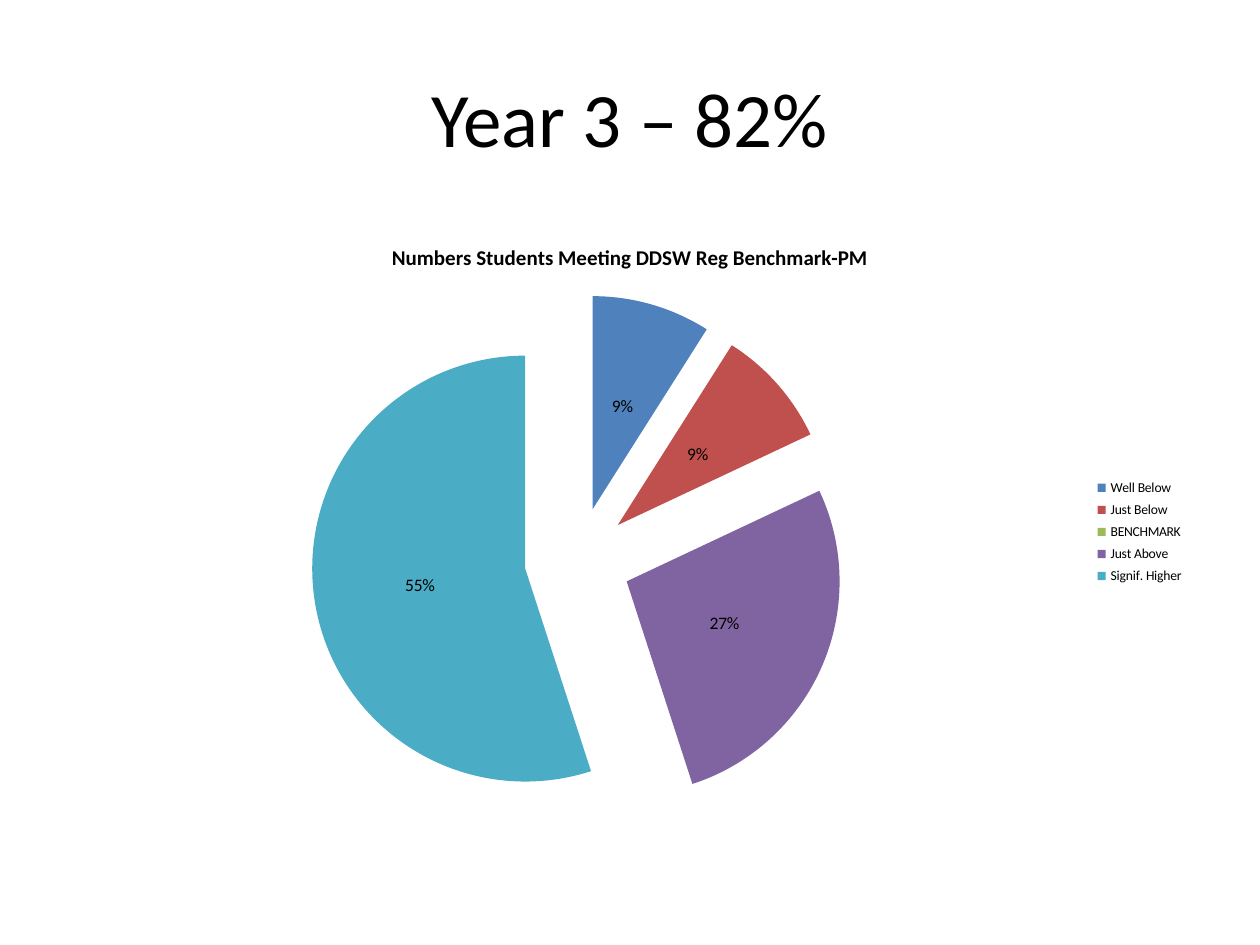
import pptx
import pptx.chart.data
import pptx.dml.color
import pptx.enum.chart
import pptx.enum.text
import pptx.oxml
import pptx.util

RGBColor = pptx.dml.color.RGBColor
BLACK = RGBColor(0x00, 0x00, 0x00)
BLUE = RGBColor(0x4F, 0x81, 0xBD)
RED = RGBColor(0xC0, 0x50, 0x4D)
GREEN = RGBColor(0x9B, 0xBB, 0x59)
PURPLE = RGBColor(0x80, 0x64, 0xA2)
TEAL = RGBColor(0x4B, 0xAC, 0xC6)

PIXELS_PER_INCH = 126
CHART_NAMESPACE = "http://schemas.openxmlformats.org/drawingml/2006/chart"

BENCHMARK_RESULTS = [
    ("Well Below", 0.09, BLUE),
    ("Just Below", 0.09, RED),
    ("BENCHMARK", 0, GREEN),
    ("Just Above", 0.27, PURPLE),
    ("Signif. Higher", 0.55, TEAL),
]


def px(length):
    return pptx.util.Emu(round(length * 914400 / PIXELS_PER_INCH))


class SlideBuilder:
    font_name = "Calibri"
    text_color = BLACK

    def __init__(self, slide):
        self.slide = slide

    def style_font(self, font, size, bold=False):
        font.name = self.font_name
        font.size = pptx.util.Pt(size)
        font.bold = bold
        font.color.rgb = self.text_color

    def add_run(self, paragraph, text, size, bold=False):
        run = paragraph.add_run()
        run.text = text
        self.style_font(run.font, size, bold)

    def title(self, text, left, top, width, height, size):
        shape = self.slide.shapes.title
        shape.left, shape.top = px(left), px(top)
        shape.width, shape.height = px(width), px(height)
        shape.text_frame.vertical_anchor = pptx.enum.text.MSO_ANCHOR.MIDDLE
        paragraph = shape.text_frame.paragraphs[0]
        paragraph.alignment = pptx.enum.text.PP_ALIGN.CENTER
        self.add_run(paragraph, text, size)

    def exploded_pie(self, heading, results, left, top, width, height, explosion):
        categories, values, colors = zip(*results)
        data = pptx.chart.data.CategoryChartData(number_format="0%")
        data.categories = categories
        data.add_series("Series 1", values)
        chart = self.slide.shapes.add_chart(
            pptx.enum.chart.XL_CHART_TYPE.PIE,
            px(left), px(top), px(width), px(height), data,
        ).chart
        self.style_font(chart.font, 10)

        chart.has_title = True
        self.add_run(chart.chart_title.text_frame.paragraphs[0], heading, 12, True)
        chart.chart_title.include_in_layout = False

        chart.has_legend = True
        chart.legend.position = pptx.enum.chart.XL_LEGEND_POSITION.RIGHT
        chart.legend.include_in_layout = False
        self.style_font(chart.legend.font, 7.8)

        plot = chart.plots[0]
        plot.vary_by_categories = True
        series = plot.series[0]
        for index, color in enumerate(colors):
            fill = series.points[index].format.fill
            fill.solid()
            fill.fore_color.rgb = color
        explosion_element = pptx.oxml.parse_xml(
            f'<c:explosion xmlns:c="{CHART_NAMESPACE}" val="{explosion}"/>'
        )
        first_point = series._element.find(f"{{{CHART_NAMESPACE}}}dPt")
        first_point.addprevious(explosion_element)

        plot.has_data_labels = True
        labels = plot.data_labels
        labels.show_value = True
        labels.show_percentage = False
        labels.number_format = "0%;;"
        labels.number_format_is_linked = False
        labels.position = pptx.enum.chart.XL_LABEL_POSITION.CENTER
        self.style_font(labels.font, 10)


def main():
    presentation = pptx.Presentation()
    presentation.slide_width = px(1260)
    presentation.slide_height = px(945)
    slide = presentation.slides.add_slide(presentation.slide_layouts[5])
    builder = SlideBuilder(slide)
    builder.title("Year 3 – 82%", 63, 38, 1134, 157, 44)
    builder.exploded_pie(
        "Numbers Students Meeting DDSW Reg Benchmark-PM",
        BENCHMARK_RESULTS, 63, 220, 1134, 624, 25,
    )
    presentation.save("out.pptx")


if __name__ == "__main__":
    main()
